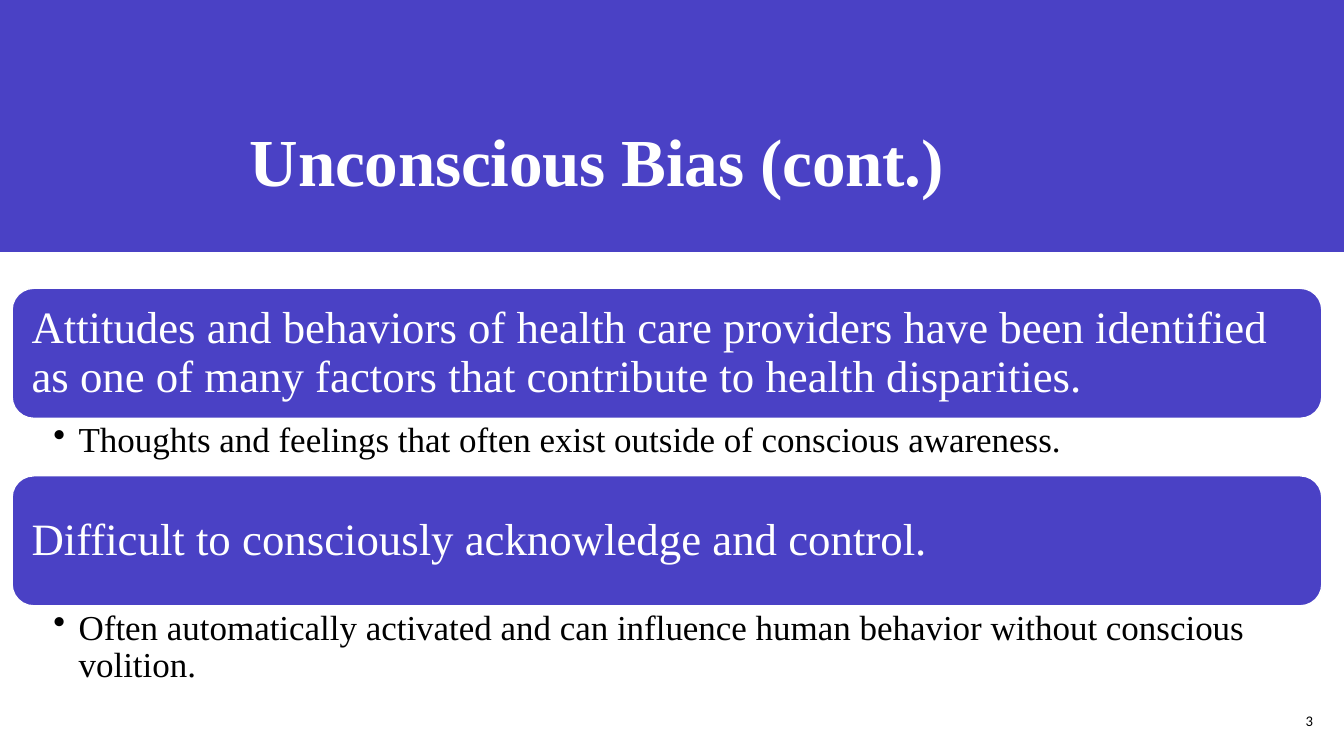
from lxml import etree
from pptx import Presentation
from pptx.dml.color import RGBColor
from pptx.enum.shapes import MSO_SHAPE
from pptx.enum.text import MSO_ANCHOR, PP_ALIGN
from pptx.oxml.ns import qn
from pptx.util import Pt

RECT, ROUNDED = MSO_SHAPE.RECTANGLE, MSO_SHAPE.ROUNDED_RECTANGLE
TOP, MIDDLE, BOTTOM = MSO_ANCHOR.TOP, MSO_ANCHOR.MIDDLE, MSO_ANCHOR.BOTTOM
LEFT, CENTER, RIGHT = PP_ALIGN.LEFT, PP_ALIGN.CENTER, PP_ALIGN.RIGHT
COLORS = {"violet": "4A41C5", "white": "FFFFFF", "black": "000000"}
EMU_PER_PX = 9144
SLIDE_SIZE = (1333, 750)
PANEL_LEFT, PANEL_WIDTH, PANEL_HEIGHT = 12, 1299, 129
FIRST_PANEL_TOP, PANEL_STEP = 286, 186
TOPICS = [
    ("Attitudes and behaviors of health care providers have been identified "
     "as one of many factors that contribute to health disparities.",
     "Thoughts and feelings that often exist outside of conscious awareness.", 58),
    ("Difficult to consciously acknowledge and control.",
     "Often automatically activated and can influence human behavior without "
     "conscious volition.", 80),
]


def px(length):
    return round(length * EMU_PER_PX)


def color(name):
    return RGBColor.from_string(COLORS[name])


def write(shape, text, size, ink, font="Times New Roman", bold=False, align=LEFT,
          anchor=TOP, insets=(10, 5, 10, 5), leading=0.9, tracking=0, bullet_indent=0):
    frame = shape.text_frame
    frame.word_wrap = True
    frame.vertical_anchor = anchor
    (frame.margin_left, frame.margin_top,
     frame.margin_right, frame.margin_bottom) = map(px, insets)
    paragraph = frame.paragraphs[0]
    paragraph.alignment = align
    paragraph.line_spacing = leading
    run = paragraph.add_run()
    run.text = text
    run.font.name, run.font.size, run.font.bold = font, Pt(size), bold
    run.font.color.rgb = color(ink)
    if tracking:
        run.font._element.set("spc", str(tracking))
    if bullet_indent:
        properties = paragraph._p.get_or_add_pPr()
        properties.set("marL", str(px(bullet_indent)))
        properties.set("indent", str(-px(bullet_indent)))
        etree.SubElement(properties, qn("a:buChar")).set("char", "•")


class SlideBuilder:
    """Draws styled elements on the current slide."""

    def __init__(self, slide):
        self.slide = slide

    def panel(self, kind, box, outline=None):
        shape = self.slide.shapes.add_shape(kind, *map(px, box))
        shape.shadow.inherit = False
        shape.fill.solid()
        shape.fill.fore_color.rgb = color("violet")
        if outline:
            shape.line.color.rgb = color(outline)
            shape.line.width = Pt(1)
        else:
            shape.line.fill.background()
        return shape

    def label(self, box, text, **style):
        write(self.slide.shapes.add_textbox(*map(px, box)), text, **style)

    def topic(self, top, statement, detail, detail_height):
        panel = self.panel(ROUNDED, (PANEL_LEFT, top, PANEL_WIDTH, PANEL_HEIGHT), "white")
        write(panel, statement, size=32, ink="white", anchor=MIDDLE, insets=(13,) * 4)
        self.label((PANEL_LEFT, top + PANEL_HEIGHT, PANEL_WIDTH, detail_height), detail,
                   size=25, ink="black", insets=(41, 4, 25, 4), bullet_indent=25)


def main():
    deck = Presentation()
    deck.slide_width, deck.slide_height = map(px, SLIDE_SIZE)
    builder = SlideBuilder(deck.slides.add_slide(deck.slide_layouts[6]))
    builder.panel(RECT, (0, 0, SLIDE_SIZE[0], 250))
    builder.label((71, 40, 1042, 164), "Unconscious Bias (cont.)", size=48, ink="white",
                  bold=True, align=CENTER, anchor=BOTTOM, tracking=-20)
    for index, topic in enumerate(TOPICS):
        builder.topic(FIRST_PANEL_TOP + index * PANEL_STEP, *topic)
    builder.label((1243, 695, 69, 40), "3", size=10.5, ink="black", font="Calibri",
                  align=RIGHT, anchor=MIDDLE, leading=1.0)
    deck.save("out.pptx")


if __name__ == "__main__":
    main()
